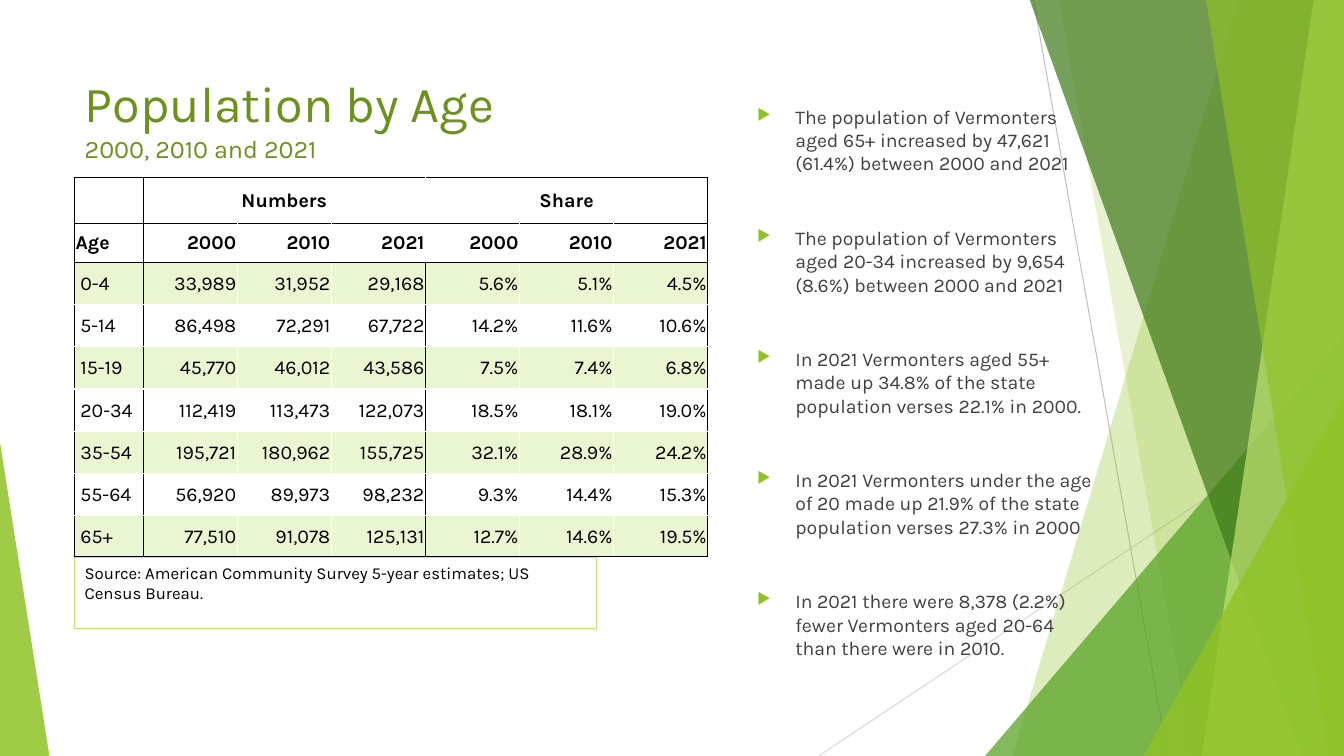
from lxml import etree
from pptx import Presentation
from pptx.dml.color import RGBColor
from pptx.enum import shapes, text
from pptx.oxml import ns
from pptx.util import Inches, Pt

GREEN, LIME = "90C226", "C0E474"
BLACK, WHITE, GRAY = "000000", "FFFFFF", "404040"
TITLE_GREEN, BAND = "6C921D", "EAF6D1"
TOP, BOTTOM, RIGHT = -0.01, 7.5, 13.33

# Facets: corners along the slanted left edge (top x, bottom x), colour, opacity
BACK_FACETS = [(12.28, 10.04, GREEN, 30), (10.5, 11.83, GREEN, 20)]
FRONT_FACETS = [
    (10.21, 12.91, "3F7819", 70),
    (13.03, 11.92, LIME, 70),
    (11.96, 13.18, GREEN, 65),
]

YEARS = ["2000", "2010", "2021"]
AGE_ROWS = [
    ["0-4", "33,989", "31,952", "29,168", "5.6%", "5.1%", "4.5%"],
    ["5-14", "86,498", "72,291", "67,722", "14.2%", "11.6%", "10.6%"],
    ["15-19", "45,770", "46,012", "43,586", "7.5%", "7.4%", "6.8%"],
    ["20-34", "112,419", "113,473", "122,073", "18.5%", "18.1%", "19.0%"],
    ["35-54", "195,721", "180,962", "155,725", "32.1%", "28.9%", "24.2%"],
    ["55-64", "56,920", "89,973", "98,232", "9.3%", "14.4%", "15.3%"],
    ["65+", "77,510", "91,078", "125,131", "12.7%", "14.6%", "19.5%"],
]
FINDINGS = [
    "The population of Vermonters aged 65+ increased by 47,621 (61.4%) between 2000 and 2021",
    "The population of Vermonters aged 20-34 increased by 9,654 (8.6%) between 2000 and 2021",
    "In 2021 Vermonters aged 55+ made up 34.8% of the state population verses 22.1% in 2000.",
    "In 2021 Vermonters under the age of 20 made up 21.9% of the state population verses 27.3% in 2000",
    "In 2021 there were 8,378 (2.2%) fewer Vermonters aged 20-64 than there were in 2010.",
]


def color(value):
    return RGBColor.from_string(value)


def add_xml(parent, tag, **attributes):
    return etree.SubElement(parent, ns.qn(tag), attributes)


class AgeSlide:
    """Holds the slide and its typeface, and draws each kind of element."""

    font_name = "Karla"

    def __init__(self, presentation):
        self.slide = presentation.slides.add_slide(presentation.slide_layouts[5])
        self.shapes = self.slide.shapes

    def style(self, paragraph, size, font_color, bold=False):
        for run in paragraph.runs:
            run.font.name = self.font_name
            run.font.size = Pt(size)
            run.font.bold = bold
            run.font.color.rgb = color(font_color)

    def line(self, start, end, line_color):
        points = [Inches(value) for value in (*start, *end)]
        connector = self.shapes.add_connector(shapes.MSO_CONNECTOR.STRAIGHT, *points)
        connector.line.color.rgb = color(line_color)
        connector.line.width = Pt(0.75)
        add_xml(connector._element.spPr, "a:effectLst")

    def paint(self, shape, fill_color, opacity):
        """Fill a borderless shape; opacity is a percentage."""
        shape.shadow.inherit = False
        shape.line.fill.background()
        shape.fill.solid()
        shape.fill.fore_color.rgb = color(fill_color)
        color_node = shape._element.spPr.find(".//" + ns.qn("a:srgbClr"))
        add_xml(color_node, "a:alpha", val=str(opacity * 1000))

    def facet(self, top_x, bottom_x, fill_color, opacity):
        """Draw a band from a slanted left edge to the slide's right side."""
        builder = self.shapes.build_freeform(Inches(top_x), Inches(TOP))
        corners = [(RIGHT, TOP), (RIGHT, BOTTOM), (bottom_x, BOTTOM)]
        builder.add_line_segments([(Inches(x), Inches(y)) for x, y in corners])
        self.paint(builder.convert_to_shape(), fill_color, opacity)

    def triangle(self, left, top, width, apex, fill_color, opacity):
        """Draw a triangle standing on the slide's bottom edge."""
        box = [Inches(value) for value in (left, top, width, BOTTOM - top)]
        shape = self.shapes.add_shape(shapes.MSO_SHAPE.ISOSCELES_TRIANGLE, *box)
        shape.adjustments[0] = apex
        self.paint(shape, fill_color, opacity)

    def title(self, heading, subheading):
        shape = self.shapes.title
        shape.left, shape.top = Inches(0.74), Inches(0.67)
        shape.width, shape.height = Inches(9.4), Inches(1.44)
        frame = shape.text_frame
        frame.text = f"{heading}\v{subheading}"
        frame.vertical_anchor = text.MSO_ANCHOR.TOP
        frame.auto_size = text.MSO_AUTO_SIZE.NONE
        paragraph = frame.paragraphs[0]
        paragraph.alignment = text.PP_ALIGN.LEFT
        self.style(paragraph, 36, TITLE_GREEN)
        paragraph.runs[1].font.size = Pt(18)

    def bullets(self, items):
        box = self.shapes.add_textbox(Inches(7.41), Inches(0.99), Inches(3.58), Inches(5.69))
        frame = box.text_frame
        frame.word_wrap = True
        frame.text = "\n".join(items)
        for paragraph in frame.paragraphs:
            self.style(paragraph, 13.9, GRAY)
            paragraph.space_after = Pt(36.5)
            properties = paragraph._p.get_or_add_pPr()
            properties.set("marL", str(Inches(0.38)))
            properties.set("indent", str(-Inches(0.38)))
            add_xml(add_xml(properties, "a:buClr"), "a:srgbClr", val=GREEN)
            add_xml(properties, "a:buSzPct", val="80000")
            add_xml(properties, "a:buChar", char="▶")

    def source_note(self, note):
        shape = self.shapes.add_shape(
            shapes.MSO_SHAPE.RECTANGLE, Inches(0.74), Inches(5.53), Inches(5.18), Inches(0.71))
        shape.shadow.inherit = False
        shape.fill.background()
        shape.line.color.rgb = color(LIME)
        shape.line.width = Pt(0.75)
        frame = shape.text_frame
        frame.word_wrap = True
        frame.vertical_anchor = text.MSO_ANCHOR.TOP
        frame.text = note
        frame.paragraphs[0].alignment = text.PP_ALIGN.LEFT
        self.style(frame.paragraphs[0], 12, BLACK)

    def borders(self, cell, black_sides):
        properties = cell._tc.get_or_add_tcPr()
        for index, (side, is_black) in enumerate(black_sides.items()):
            border = etree.Element(ns.qn(f"a:{side}"), w=str(Pt(0.5 if is_black else 1)))
            fill = add_xml(border, "a:solidFill")
            add_xml(fill, "a:srgbClr", val=BLACK if is_black else WHITE)
            properties.insert(index, border)

    def age_table(self, rows):
        heights = [0.46, 0.38] + [0.42] * 6 + [0.4]
        widths = [0.68] + [5.6 / 6] * 6
        table = self.shapes.add_table(
            len(rows), len(widths), Inches(0.74), Inches(1.76),
            Inches(sum(widths)), Inches(sum(heights))).table
        table.first_row = table.horz_banding = False
        for column, width in zip(table.columns, widths):
            column.width = Inches(width)
        for row, height in zip(table.rows, heights):
            row.height = Inches(height)
        for first in (1, 4):
            table.cell(0, first).merge(table.cell(0, first + 2))
        black_rows = {0, 1, 2, len(rows)}
        for r, values in enumerate(rows):
            black_columns = {0, 1, 7} if r < 2 else {0, 1, 4, 7}
            for c, value in enumerate(values):
                cell = table.cell(r, c)
                cell.margin_left = cell.margin_right = cell.margin_top = Inches(0.01)
                cell.margin_bottom = 0
                cell.vertical_anchor = text.MSO_ANCHOR.MIDDLE
                if r >= 2 and r % 2 == 0:
                    cell.fill.solid()
                    cell.fill.fore_color.rgb = color(BAND)
                else:
                    cell.fill.background()
                self.borders(cell, {
                    "lnL": c in black_columns,
                    "lnR": c + cell.span_width in black_columns,
                    "lnT": r in black_rows,
                    "lnB": r + 1 in black_rows,
                })
                if value:
                    cell.text = value
                    paragraph = cell.text_frame.paragraphs[0]
                    align = text.PP_ALIGN
                    paragraph.alignment = (
                        align.CENTER if r == 0 else align.RIGHT if c else align.LEFT)
                    self.style(paragraph, 14, BLACK, bold=r < 2)


def main():
    presentation = Presentation()
    presentation.slide_width, presentation.slide_height = Inches(13.33), Inches(7.5)
    page = AgeSlide(presentation)
    page.line((10.25, 0), (11.58, 7.5), "BFBFBF")
    page.line((13.33, 4.03), (8.12, 7.5), "D9D9D9")
    for facet in BACK_FACETS:
        page.facet(*facet)
    page.triangle(9.77, 3.33, 3.56, 1, "54A021", 72)
    for facet in FRONT_FACETS:
        page.facet(*facet)
    page.triangle(11.34, 3.93, 1.99, 1, GREEN, 80)
    page.triangle(0, 4.39, 0.49, 0, GREEN, 85)
    page.title("Population by Age", "2000, 2010 and 2021")
    page.bullets(FINDINGS)
    page.source_note("Source: American Community Survey 5-year estimates; US Census Bureau.")
    headers = [["", "Numbers", "", "", "Share", "", ""], ["Age"] + YEARS * 2]
    page.age_table(headers + [[f" {age}", *values] for age, *values in AGE_ROWS])
    presentation.save("out.pptx")


if __name__ == "__main__":
    main()
